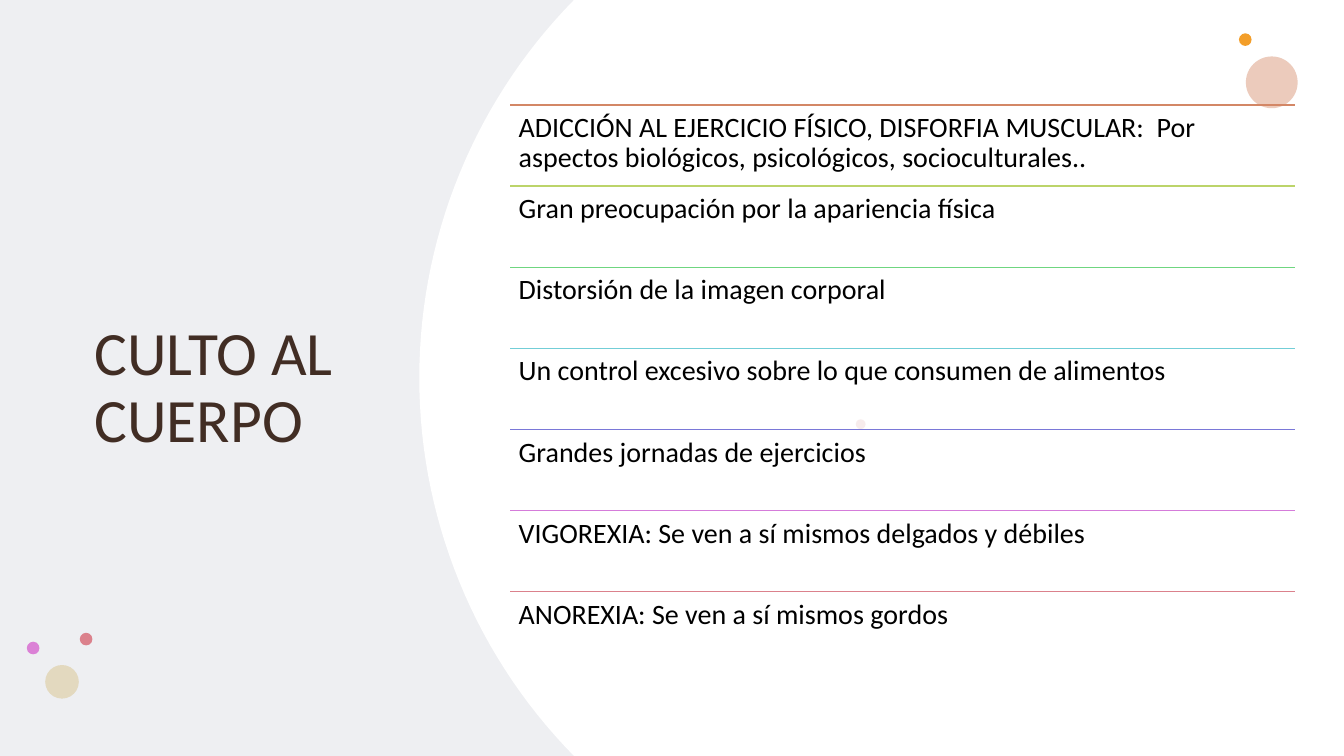
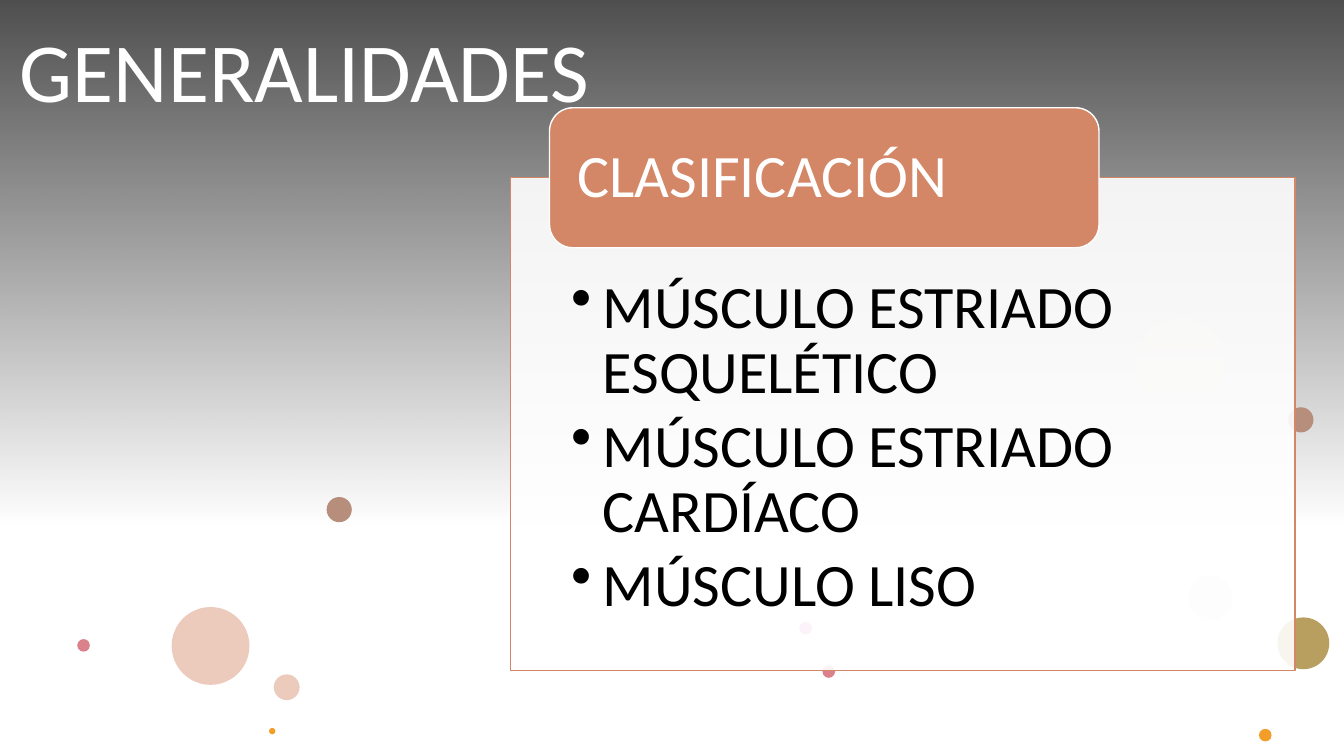
import math
import pptx
import pptx.util
import pptx.dml.color
import pptx.enum.shapes
import pptx.enum.text
import pptx.oxml.ns
from lxml import etree

Pt = pptx.util.Pt
KIND = pptx.enum.shapes.MSO_SHAPE
ANCHOR = pptx.enum.text.MSO_ANCHOR
qn = pptx.oxml.ns.qn

WIDE, HIGH = 960, 540
FONT = "Calibri"
WHITE, BLACK, BROWN = "FFFFFF", "000000", "412D24"
MIST, CORAL, PEACH, AMBER = "C8CCD4", "D38766", "E5B7A3", "F39E29"
ROSE, PINK, SAND, GOLD, CLAY = "DB818C", "DB81D6", "E3D9BF", "B89F5F", "B68E7B"

CULT = "CULTO AL CUERPO"
ROWS = [
    ("ADICCIÓN AL EJERCICIO FÍSICO, DISFORFIA MUSCULAR:  Por aspectos "
     "biológicos, psicológicos, socioculturales..", CORAL),
    ("Gran preocupación por la apariencia física", "BCD46A"),
    ("Distorsión de la imagen corporal", "6FD680"),
    ("Un control excesivo sobre lo que consumen de alimentos", "73CED7"),
    ("Grandes jornadas de ejercicios", "7A78D8"),
    ("VIGOREXIA: Se ven a sí mismos delgados y débiles", "D57CDA"),
    ("ANOREXIA: Se ven a sí mismos gordos", ROSE),
]
BASICS = "GENERALIDADES"
CLASS = "CLASIFICACIÓN"
TYPES = ["MÚSCULO ESTRIADO ESQUELÉTICO", "MÚSCULO ESTRIADO CARDÍACO",
         "MÚSCULO LISO"]

# left, top, diameter, colour, opacity
CULT_DOTS = [
    (889.9, 40.3, 37, PEACH, 72), (885, 23.8, 9, AMBER, 100),
    (611.3, 299.5, 7, "E3BEBE", 28), (57, 452, 9, ROSE, 100),
    (32.3, 475, 24, SAND, 100), (19.2, 458.4, 9, PINK, 100),
]
BASIC_DOTS = [
    (811.4, 227.5, 63.4, SAND, 30), (920.2, 290.9, 18, CLAY, 100),
    (233.3, 355, 18, CLAY, 100), (122.6, 433.6, 55.6, PEACH, 72),
    (848.9, 411, 31.7, SAND, 30), (571, 444.2, 9, PINK, 100),
    (55.2, 456.5, 9, ROSE, 100), (587.5, 475.2, 9, ROSE, 100),
    (912.5, 441, 37, GOLD, 100), (195.6, 481.7, 18.4, PEACH, 72),
    (192.2, 520, 4.5, AMBER, 100), (899.3, 520.6, 9, AMBER, 100),
]

LEFT, SPAN = 364.5, 560.5
TOP, STEP = 75, 57.95


def rgb(code):
    return pptx.dml.color.RGBColor.from_string(code)


def fade(node, part):
    """Give every plain colour below node an opacity in percent."""
    for tint in node.iter(qn("a:srgbClr")):
        etree.SubElement(tint, qn("a:alpha"), val=str(part * 1000))


def paint(shape, code, part=100, edge=None):
    shape.shadow.inherit = False
    shape.fill.solid()
    shape.fill.fore_color.rgb = rgb(code)
    if part < 100:
        fade(shape._element.spPr, part)
    if edge:
        shape.line.color.rgb = rgb(edge)
        shape.line.width = Pt(1)
    else:
        shape.line.fill.background()
    return shape


def block(slide, kind, box, *look):
    return paint(slide.shapes.add_shape(kind, *map(Pt, box)), *look)


def dots(slide, items):
    for left, top, size, code, part in items:
        block(slide, KIND.OVAL, (left, top, size, size), code, part)


def write(shape, lines, size, code, pad, anchor=ANCHOR.TOP, after=0, hang=0):
    """Fill a shape with paragraphs; hang is the bullet indent, 0 for none."""
    frame = shape.text_frame
    sides = dict(zip(("left", "top", "right", "bottom"), pad))
    form = {"margin_" + side: Pt(gap) for side, gap in sides.items()}
    form.update(word_wrap=True, vertical_anchor=anchor)
    for name, value in form.items():
        setattr(frame, name, value)
    for i, line in enumerate(lines):
        para = frame.paragraphs[0] if i == 0 else frame.add_paragraph()
        look = {"alignment": pptx.enum.text.PP_ALIGN.LEFT,
                "line_spacing": 0.9, "space_after": Pt(after)}
        for name, value in look.items():
            setattr(para, name, value)
        run = para.add_run()
        run.text = line
        for name, value in {"name": FONT, "size": Pt(size)}.items():
            setattr(run.font, name, value)
        run.font.color.rgb = rgb(code)
        if hang:
            props = para._p.get_or_add_pPr()
            props.set("marL", str(Pt(hang)))
            props.set("indent", str(-Pt(hang)))
            etree.SubElement(props, qn("a:buChar"), char="•")


def label(slide, box, *args, **more):
    write(slide.shapes.add_textbox(*map(Pt, box)), *args, **more)


def title(slide, box, text, size, code, anchor):
    label(slide, box, [text], size, code, (7.2, 3.6, 7.2, 3.6), anchor)


def rule(slide, top, code):
    kind = pptx.enum.shapes.MSO_CONNECTOR.STRAIGHT
    ends = map(Pt, (LEFT, top, LEFT + SPAN, top))
    line = slide.shapes.add_connector(kind, *ends)
    line.line.color.rgb = rgb(code)
    line.line.width = Pt(1)
    etree.SubElement(line._element.spPr, qn("a:effectLst"))


def curve(slide):
    """White area whose left side is an arc over the full slide height."""
    edge, sag, half = 299.5, 110.5, HIGH / 2
    rad = (half ** 2 + sag ** 2) / (2 * sag)
    turn = math.asin(half / rad)
    count = 60
    arc = []
    for i in range(count + 1):
        ang = turn * (1 - 2 * i / count)
        arc.append((Pt(edge + rad * (1 - math.cos(ang))),
                    Pt(half + rad * math.sin(ang))))
    pen = slide.shapes.build_freeform(Pt(WIDE), 0)
    pen.add_line_segments([(Pt(WIDE), Pt(HIGH))] + arc)
    paint(pen.convert_to_shape(), WHITE)


def shade(slide):
    """Black band that fades out downwards."""
    band = block(slide, KIND.RECTANGLE, (0, 0, WIDE, 376.5), BLACK)
    band.fill.gradient()
    band.fill.gradient_angle = 270
    for stop, spot, part in zip(band.fill.gradient_stops, (0, 1), (70, 0)):
        stop.position = spot
        stop.color.rgb = rgb(BLACK)
        fade(stop._gs, part)


def cult(slide):
    block(slide, KIND.RECTANGLE, (0, 0, WIDE, HIGH), MIST, 30)
    curve(slide)
    dots(slide, CULT_DOTS)
    title(slide, (60.5, 75, 225.5, 406), CULT, 44, BROWN, ANCHOR.MIDDLE)
    for i, (text, code) in enumerate(ROWS):
        top = TOP + i * STEP
        rule(slide, top, code)
        label(slide, (LEFT, top, SPAN, STEP), [text], 20, BLACK, (6,) * 4)


def basics(slide):
    shade(slide)
    title(slide, (7.2, -30, 567.5, 119.5), BASICS, 60, WHITE, ANCHOR.BOTTOM)
    dots(slide, BASIC_DOTS)
    panel = block(slide, KIND.RECTANGLE, (LEFT, 127, SPAN, 352),
                  WHITE, 90, CORAL)
    write(panel, TYPES, 43, BLACK, (43.5, 70.5, 43.5, 24),
          after=6.45, hang=22.5)
    head = block(slide, KIND.ROUNDED_RECTANGLE, (392.5, 77, 392.5, 100),
                 CORAL, 100, WHITE)
    write(head, [CLASS], 43, WHITE, (15, 0, 15, 0), ANCHOR.MIDDLE)


def main():
    deck = pptx.Presentation()
    deck.slide_width, deck.slide_height = Pt(WIDE), Pt(HIGH)
    for build in (cult, basics):
        build(deck.slides.add_slide(deck.slide_layouts[6]))
    deck.save("out.pptx")


if __name__ == "__main__":
    main()
